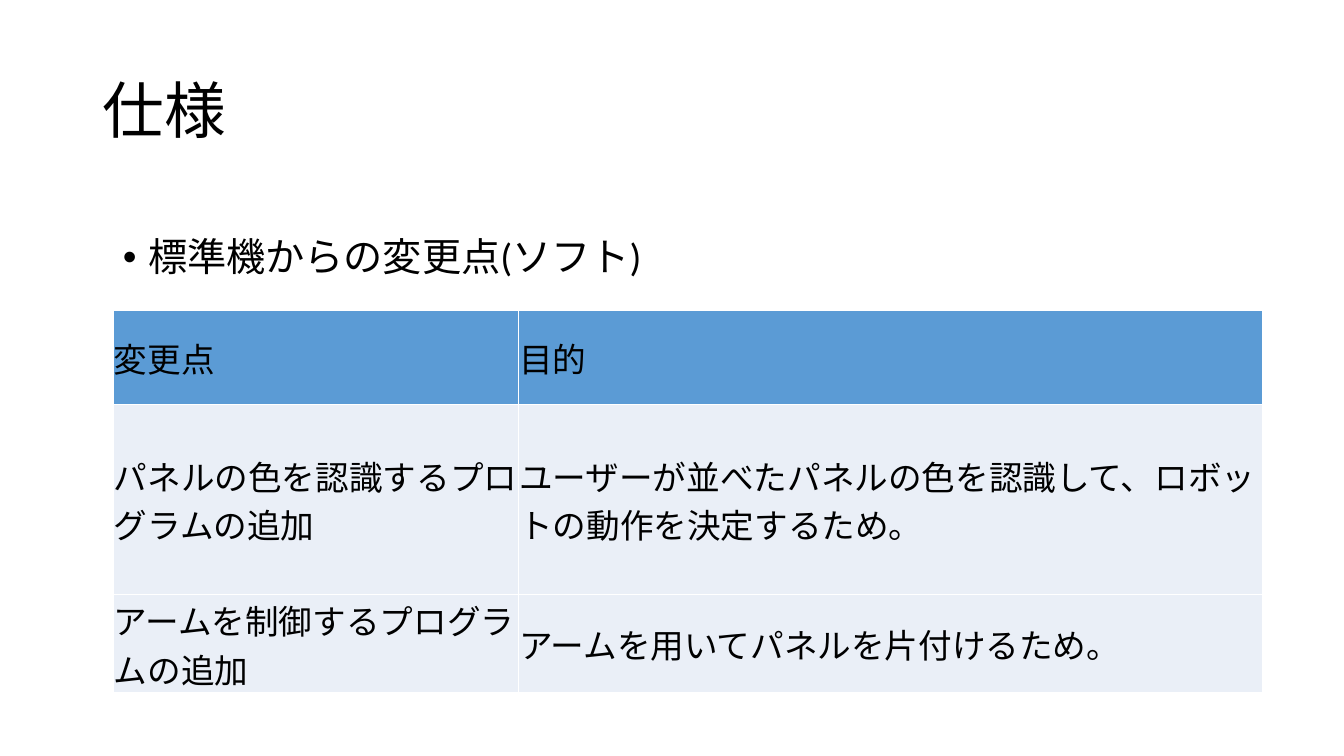
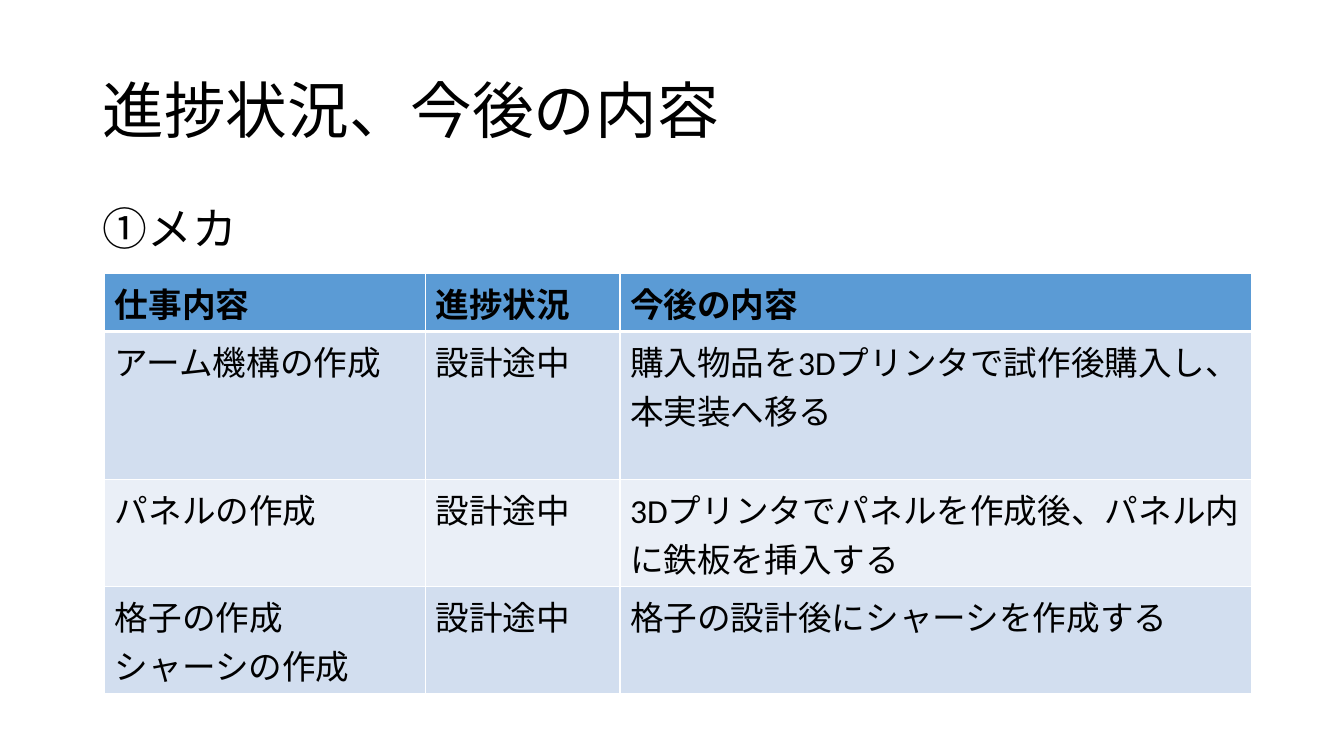
"""Build two slides on specification changes and mechanical progress."""
import pptx
import pptx.dml.color
import pptx.enum.lang
import pptx.enum.text
import pptx.oxml
import pptx.oxml.ns
import pptx.util

Inches = pptx.util.Inches
Pt = pptx.util.Pt
FONT = "Calibri"
BLACK = "000000"
WHITE = "FFFFFF"
HEADER = "5B9BD5"
DARK_BAND = "D2DEEF"
LIGHT_BAND = "EAEFF7"
MIDDLE = pptx.enum.text.MSO_ANCHOR.MIDDLE
TOP = pptx.enum.text.MSO_ANCHOR.TOP


def color(value):
    return pptx.dml.color.RGBColor.from_string(value)


def add_span(para, text, size, bold=False):
    span = para.add_run()
    span.text = text
    font = span.font
    font.name = FONT
    font.size = Pt(size)
    font.bold = bold
    font.color.rgb = color(BLACK)
    font.language_id = pptx.enum.lang.MSO_LANGUAGE_ID.JAPANESE


def add_text(page, place, text, size, anchor=TOP, before=0):
    box = page.shapes.add_textbox(*map(Inches, place))
    frame = box.text_frame
    frame.word_wrap = True
    frame.vertical_anchor = anchor
    para = frame.paragraphs[0]
    para.line_spacing = 0.9
    para.space_before = Pt(before)
    add_span(para, text, size)
    return para


def add_bullet(para, indent):
    properties = para._p.get_or_add_pPr()
    properties.set("marL", str(Inches(indent)))
    properties.set("indent", str(-Inches(indent)))
    namespace = pptx.oxml.ns.nsdecls("a")
    for tag in ('buFont {} typeface="Arial"', 'buChar {} char="•"'):
        properties.append(pptx.oxml.parse_xml(f"<a:{tag.format(namespace)}/>"))


def add_page(deck, title):
    page = deck.slides.add_slide(deck.slide_layouts[6])
    add_text(page, (0.92, 0.4, 11.5, 1.45), title, 44, MIDDLE)
    return page


def set_borders(cell, top=1, bottom=1):
    widths = {"lnL": 1, "lnR": 1, "lnT": top, "lnB": bottom}
    properties = cell._tc.get_or_add_tcPr()
    for index, (side, width) in enumerate(widths.items()):
        line = pptx.oxml.parse_xml(
            f'<a:{side} {pptx.oxml.ns.nsdecls("a")} w="{Pt(width)}">'
            f'<a:solidFill><a:srgbClr val="{WHITE}"/></a:solidFill></a:{side}>')
        properties.insert(index, line)


def set_compact(cell):
    cell.vertical_anchor = MIDDLE
    cell.margin_left = cell.margin_top = cell.margin_right = Inches(0.01)
    cell.margin_bottom = 0


def add_grid(page, corner, widths, heights, rows, bands, rule=1,
             bold_header=False, compact=False):
    size = (sum(widths), sum(heights))
    frame = page.shapes.add_table(
        len(rows), len(widths), *map(Inches, (*corner, *size)))
    table = frame.table
    table.first_row = table.horz_banding = False
    for column, width in zip(table.columns, widths):
        column.width = Inches(width)
    for index, (row, height, texts) in enumerate(zip(table.rows, heights, rows)):
        row.height = Inches(height)
        fill = bands[(index - 1) % len(bands)] if index else HEADER
        for cell, text in zip(row.cells, texts):
            cell.fill.solid()
            cell.fill.fore_color.rgb = color(fill)
            set_borders(cell, rule if index == 1 else 1, rule if index == 0 else 1)
            if compact:
                set_compact(cell)
            for number, line in enumerate(text.split("\n")):
                words = cell.text_frame
                para = words.add_paragraph() if number else words.paragraphs[0]
                add_span(para, line, 24, bold_header and index == 0)


def add_specification(deck):
    page = add_page(deck, "仕様")
    para = add_text(page, (1.12, 2.31, 10.63, 0.65),
                    "標準機からの変更点(ソフト)", 28, before=10)
    add_bullet(para, 0.25)
    rows = [
        ("変更点", "目的"),
        ("パネルの色を認識するプログラムの追加",
         "ユーザーが並べたパネルの色を認識して、ロボットの動作を決定するため。"),
        ("アームを制御するプログラムの追加",
         "アームを用いてパネルを片付けるため。"),
    ]
    add_grid(page, (1.12, 3.08), (4.02, 7.38), (0.93, 1.89, 0.97), rows,
             [LIGHT_BAND], compact=True)


def add_progress(deck):
    page = add_page(deck, "進捗状況、今後の内容")
    add_text(page, (0.92, 2, 11.5, 0.65), "①メカ", 32, before=10)
    rows = [
        ("仕事内容", "進捗状況", "今後の内容"),
        ("アーム機構の作成", "設計途中",
         "購入物品を3Dプリンタで試作後購入し、本実装へ移る"),
        ("パネルの作成", "設計途中",
         "3Dプリンタでパネルを作成後、パネル内に鉄板を挿入する"),
        ("格子の作成\nシャーシの作成", "設計途中",
         "格子の設計後にシャーシを作成する"),
    ]
    add_grid(page, (1.04, 2.71), (3.18, 1.93, 6.26), (0.58, 1.47, 1.06, 1.06),
             rows, [DARK_BAND, LIGHT_BAND], rule=3, bold_header=True)


def main():
    deck = pptx.Presentation()
    deck.slide_width = Inches(13.33)
    deck.slide_height = Inches(7.5)
    add_specification(deck)
    add_progress(deck)
    deck.save("out.pptx")


if __name__ == "__main__":
    main()
